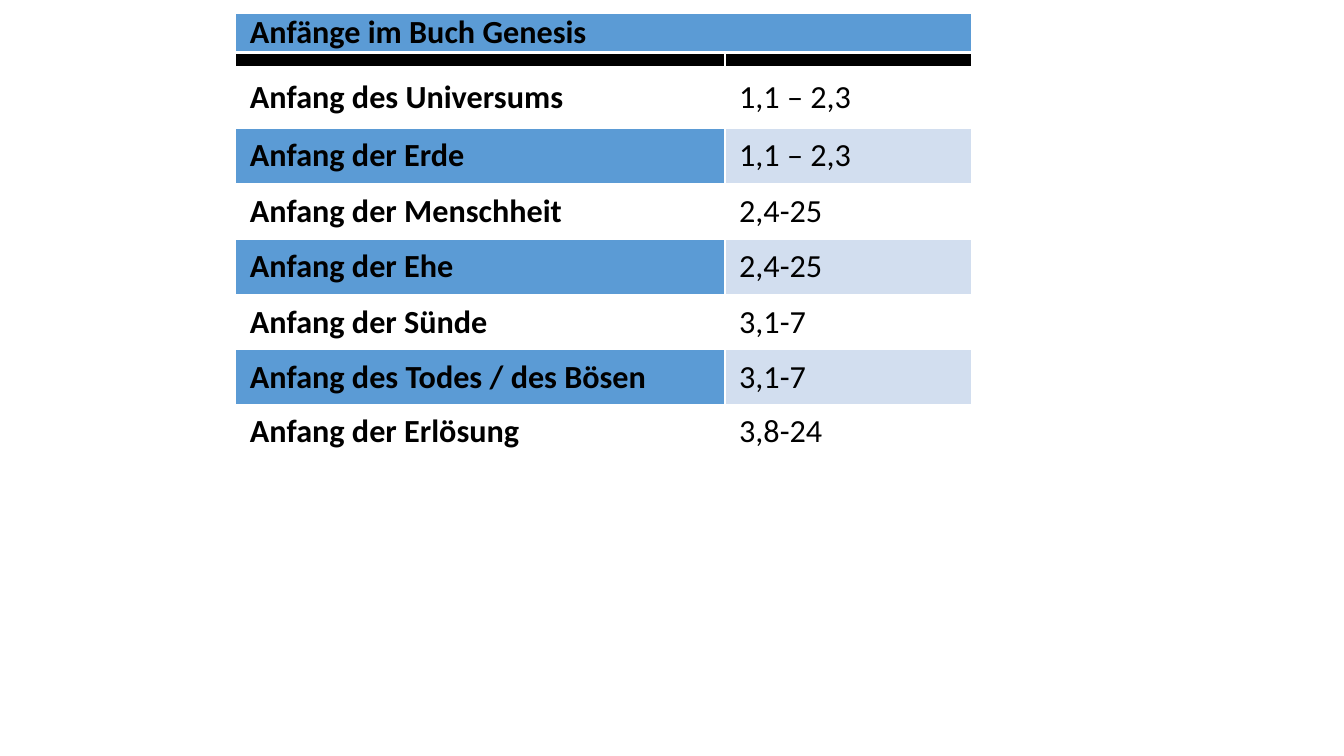
"""Build a slide with a table of the beginnings in the book of Genesis."""
from dataclasses import dataclass

from lxml import etree
from pptx import Presentation
from pptx import util as u
from pptx.dml import color as dml
from pptx.enum import text as txt
from pptx.oxml import ns
from pptx.table import Table, _Cell


@dataclass(frozen=True)
class Theme:
    font: str = "Calibri"
    size: float = 23
    tiny: float = 6
    thin: float = 1
    thick: float = 3
    black: str = "000000"
    white: str = "FFFFFF"
    blue: str = "5B9BD5"
    pale: str = "D2DEEF"


@dataclass(frozen=True)
class Entry:
    name: str
    verse: str
    high: float = 7.33


LOOK = Theme()
WIDE, HIGH = u.Inches(13.33), u.Inches(7.5)
LEFT, TOP = 17.55, 1.73
COLS = (36.4, 18.35)
HEAD, BAR = 5.2, 1.87
TITLE = "Anfänge im Buch Genesis"
ROWS = (
    Entry("Anfang des Universums", "1,1 – 2,3", 8.13),
    Entry("Anfang der Erde", "1,1 – 2,3"),
    Entry("Anfang der Menschheit", "2,4-25"),
    Entry("Anfang der Ehe", "2,4-25"),
    Entry("Anfang der Sünde", "3,1-7"),
    Entry("Anfang des Todes / des Bösen", "3,1-7", 7.2),
    Entry("Anfang der Erlösung", "3,8-24", 7.2),
)


def across(share: float) -> u.Emu:
    """Turn a percentage of the slide's width into a length."""
    return u.Emu(round(WIDE * share / 100))


def down(share: float) -> u.Emu:
    """Turn a percentage of the slide's height into a length."""
    return u.Emu(round(HIGH * share / 100))


def edge(cell: _Cell, top: float = LOOK.thin, base: float = LOOK.thin) -> None:
    """Draw white borders around a cell."""
    props = cell._tc.get_or_add_tcPr()
    sides = {"lnL": LOOK.thin, "lnR": LOOK.thin, "lnT": top, "lnB": base}
    for spot, (side, width) in enumerate(sides.items()):
        line = etree.Element(ns.qn(f"a:{side}"), w=str(u.Pt(width)))
        fill = etree.SubElement(line, ns.qn("a:solidFill"))
        etree.SubElement(fill, ns.qn("a:srgbClr"), val=LOOK.white)
        props.insert(spot, line)


def paint(cell: _Cell, fill: str) -> None:
    """Fill a cell and set its insets."""
    cell.fill.solid()
    cell.fill.fore_color.rgb = dml.RGBColor.from_string(fill)
    cell.margin_left = cell.margin_right = u.Inches(0.14)
    cell.margin_top = cell.margin_bottom = 0


def write(cell: _Cell, words: str, *, bold: bool = False,
          anchor: txt.MSO_ANCHOR = txt.MSO_ANCHOR.MIDDLE) -> None:
    """Put formatted text into a cell."""
    cell.vertical_anchor = anchor
    run = cell.text_frame.paragraphs[0].add_run()
    run.text = words
    run.font.name, run.font.size, run.font.bold = LOOK.font, u.Pt(LOOK.size), bold
    run.font.color.rgb = dml.RGBColor.from_string(LOOK.black)


def crown(table: Table) -> None:
    """Format the merged heading and the black bar below it."""
    for head, bar in zip(table.rows[0].cells, table.rows[1].cells):
        paint(head, LOOK.blue)
        edge(head, base=LOOK.thick)
        paint(bar, LOOK.black)
        edge(bar, top=LOOK.thick)
        para = bar.text_frame.paragraphs[0]._p
        etree.SubElement(para, ns.qn("a:endParaRPr"), sz=str(LOOK.tiny * 100))
    table.cell(0, 0).merge(table.cell(0, 1))
    write(table.cell(0, 0), TITLE, bold=True, anchor=txt.MSO_ANCHOR.TOP)


def fill(table: Table) -> None:
    """Write the entries with alternating fills."""
    for spot, entry in enumerate(ROWS):
        fills = (LOOK.blue, LOOK.pale) if spot % 2 else (LOOK.white, LOOK.white)
        name, verse = table.rows[spot + 2].cells
        for cell, tone in zip((name, verse), fills):
            paint(cell, tone)
            edge(cell)
        write(name, entry.name, bold=True)
        write(verse, entry.verse)


def main() -> None:
    """Build and save the slide."""
    deck = Presentation()
    deck.slide_width, deck.slide_height = WIDE, HIGH
    slide = deck.slides.add_slide(deck.slide_layouts[6])
    highs = (HEAD, BAR, *(entry.high for entry in ROWS))
    table = slide.shapes.add_table(
        len(highs), len(COLS), across(LEFT), down(TOP),
        across(sum(COLS)), down(sum(highs))).table
    table.first_row = table.horz_banding = False
    for col, share in zip(table.columns, COLS):
        col.width = across(share)
    for row, share in zip(table.rows, highs):
        row.height = down(share)
    crown(table)
    fill(table)
    deck.save("out.pptx")


if __name__ == "__main__":
    main()
